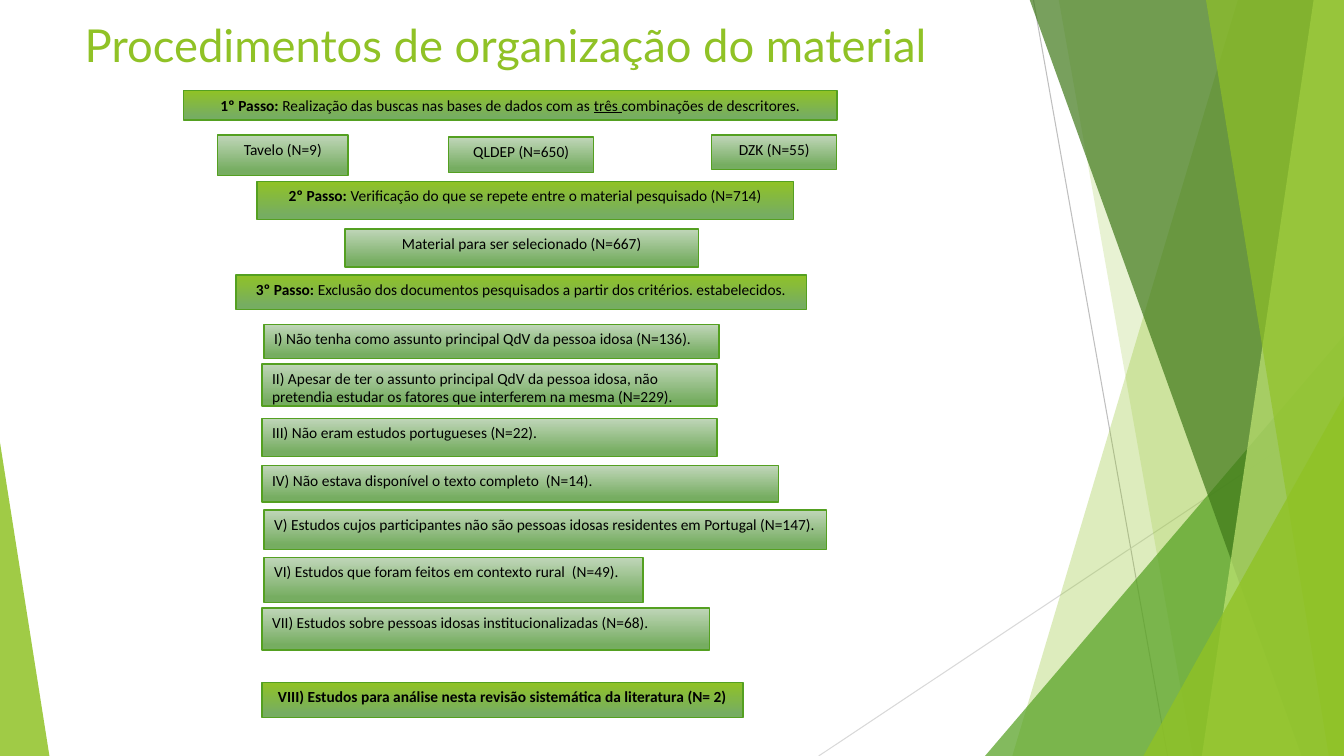
from lxml import etree
from pptx import Presentation
from pptx.dml.color import RGBColor
from pptx.enum.shapes import MSO_CONNECTOR, MSO_SHAPE
from pptx.enum.text import MSO_ANCHOR, MSO_AUTO_SIZE, PP_ALIGN
from pptx.oxml.ns import qn
from pptx.util import Inches, Pt

RECT, TRI = MSO_SHAPE.RECTANGLE, MSO_SHAPE.ISOSCELES_TRIANGLE
LINE = MSO_CONNECTOR.STRAIGHT
TOP, LEFT, CENTER = MSO_ANCHOR.TOP, PP_ALIGN.LEFT, PP_ALIGN.CENTER
NO_FIT = MSO_AUTO_SIZE.NONE

WIDTH, HEIGHT = 13.33, 7.5
COLORS = {
    "lime": "90C226", "green": "54A021", "dark": "3F7819", "pale": "C0E474",
    "sage": "C0D6B9", "moss": "76AD61", "black": "000000",
    "gray": "BFBFBF", "light": "D9D9D9",
}

# Each step: box, bold lead, then plain text with underlined words between bars
STEPS = [
    ((1.82, 0.9, 6.48, 0.29), "1º Passo:",
     " Realização das buscas nas bases de dados com as |três |combinações de descritores."),
    ((2.55, 1.8, 5.32, 0.38), "2º Passo: ",
     "Verificação do que se repete entre o material pesquisado (N=714)"),
    ((2.34, 2.73, 5.66, 0.34), "3º Passo: ",
     "Exclusão dos documentos pesquisados a partir dos critérios. estabelecidos."),
    ((2.6, 6.77, 4.77, 0.35),
     "VIII) Estudos para análise nesta revisão sistemática da literatura (N= 2)", ""),
]
COUNTS = [
    ((2.16, 1.34, 1.29, 0.4), "Tavelo (N=9)"),
    ((4.45, 1.36, 1.44, 0.35), "QLDEP (N=650)"),
    ((7.06, 1.34, 1.24, 0.34), "DZK (N=55)"),
    ((3.42, 2.27, 3.51, 0.38), "Material para ser selecionado (N=667)"),
]
RULES = [
    ((2.62, 3.22, 4.51, 0.34),
     "I) Não tenha como assunto principal QdV da pessoa idosa (N=136)."),
    ((2.6, 3.61, 4.51, 0.42),
     "II) Apesar de ter o assunto principal QdV da pessoa idosa, não "
     "pretendia estudar os fatores que interferem na mesma (N=229)."),
    ((2.6, 4.15, 4.51, 0.38), "III) Não eram estudos portugueses (N=22)."),
    ((2.6, 4.62, 5.12, 0.36), "IV) Não estava disponível o texto completo  (N=14)."),
    ((2.62, 5.06, 5.58, 0.39),
     "V) Estudos cujos participantes não são pessoas idosas residentes em Portugal (N=147)."),
    ((2.62, 5.53, 3.76, 0.45), "VI) Estudos que foram feitos em contexto rural  (N=49)."),
    ((2.6, 6.03, 4.44, 0.42),
     "VII) Estudos sobre pessoas idosas institucionalizadas (N=68)."),
]


def rgb(name):
    return RGBColor.from_string(COLORS[name])


def tint(shape, color, alpha):
    """Fill a shape with a see-through colour, without outline."""
    shape.shadow.inherit = False
    shape.line.fill.background()
    shape.fill.solid()
    shape.fill.fore_color.rgb = rgb(color)
    node = shape._element.spPr.find(qn("a:solidFill"))[0]
    etree.SubElement(node, qn("a:alpha"), val=str(alpha * 1000))


def ray(slide, start, end, color):
    line = slide.shapes.add_connector(LINE, *map(Inches, start + end))
    line.line.color.rgb = rgb(color)
    line.line.width = Pt(0.75)
    etree.SubElement(line._element.spPr, qn("a:effectLst"))


def band(slide, top, base, color, alpha):
    """Slanted edge from top to base, filled up to the right slide edge."""
    y = -0.01
    pen = slide.shapes.build_freeform(Inches(top), Inches(y))
    corners = [(WIDTH, y), (WIDTH, HEIGHT), (base, HEIGHT)]
    pen.add_line_segments([(Inches(a), Inches(b)) for a, b in corners])
    tint(pen.convert_to_shape(), color, alpha)


def wedge(slide, left, top, width, peak, color, alpha):
    """Triangle that stands on the bottom edge of the slide."""
    box = (left, top, width, HEIGHT - top)
    shape = slide.shapes.add_shape(TRI, *map(Inches, box))
    shape.adjustments[0] = peak
    tint(shape, color, alpha)


def decor(slide):
    ray(slide, (10.25, 0), (11.58, HEIGHT), "gray")
    ray(slide, (WIDTH, 4.03), (8.12, HEIGHT), "light")
    band(slide, 12.28, 10.04, "lime", 30)
    band(slide, 10.5, 11.83, "lime", 20)
    wedge(slide, 9.77, 3.33, 3.56, 1, "green", 72)
    band(slide, 10.21, 12.91, "dark", 70)
    band(slide, 13.03, 11.92, "pale", 70)
    band(slide, 11.96, 13.18, "lime", 65)
    wedge(slide, 11.34, 3.93, 1.99, 1, "lime", 80)
    wedge(slide, 0, 4.39, 0.49, 0, "lime", 85)


def heading(slide, box, text):
    title = slide.shapes.title
    title.left, title.top, title.width, title.height = map(Inches, box)
    frame = title.text_frame
    frame.text = text
    frame.auto_size = NO_FIT
    frame.vertical_anchor = TOP
    para = frame.paragraphs[0]
    para.alignment = LEFT
    para.font.name, para.font.size = "Lato", Pt(32.4)
    para.font.color.rgb = rgb("lime")


def panel(slide, box, color, align):
    """Gradient box; returns its paragraph, ready for text."""
    shape = slide.shapes.add_shape(RECT, *map(Inches, box))
    shape.shadow.inherit = False
    shape.fill.gradient()
    shape.fill.gradient_angle = 270
    for stop, name, place in zip(shape.fill.gradient_stops, (color, "moss"), (0, 0.88)):
        stop.color.rgb = rgb(name)
        stop.position = place
    shape.line.color.rgb = rgb("green")
    shape.line.width = Pt(1)
    frame = shape.text_frame
    frame.word_wrap = True
    frame.vertical_anchor = TOP
    para = frame.paragraphs[0]
    para.alignment = align
    para.space_after = Pt(10)
    para.font.name, para.font.size = "Calibri", Pt(11)
    para.font.color.rgb = rgb("black")
    return para


def step(slide, box, lead, rest):
    para = panel(slide, box, "lime", CENTER)
    run = para.add_run()
    run.text, run.font.bold = lead, True
    if rest:
        for i, part in enumerate(rest.split("|")):
            run = para.add_run()
            run.text = part
            if i % 2:
                run.font.underline = True


def note(slide, box, text, align):
    panel(slide, box, "sage", align).add_run().text = text


def main():
    deck = Presentation()
    deck.slide_width, deck.slide_height = Inches(WIDTH), Inches(HEIGHT)
    slide = deck.slides.add_slide(deck.slide_layouts[5])
    decor(slide)
    heading(slide, (0.74, 0.12, 9.4, 0.59), "Procedimentos de organização do material")
    for box, lead, rest in STEPS:
        step(slide, box, lead, rest)
    for group, align in ((COUNTS, CENTER), (RULES, LEFT)):
        for box, text in group:
            note(slide, box, text, align)
    deck.save("out.pptx")


if __name__ == "__main__":
    main()
